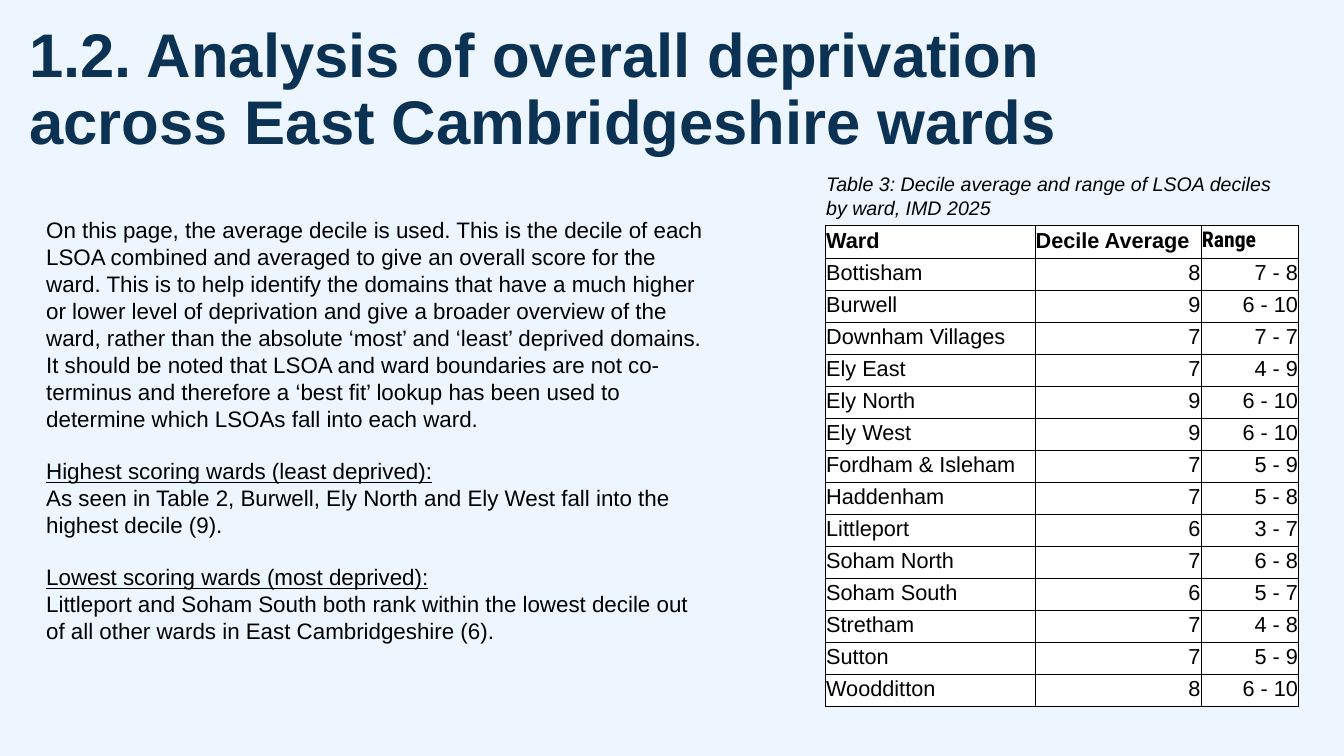
from lxml.etree import SubElement
from pptx import Presentation
from pptx.dml.color import RGBColor
from pptx.enum.text import MSO_ANCHOR, MSO_AUTO_SIZE, PP_ALIGN
from pptx.oxml.ns import qn
from pptx.util import Cm, Pt

COLORS = {"background": "EDF6FF", "title": "0B3153", "text": "000000", "cell": "FFFFFF"}

TITLE = "1.2. Analysis of overall deprivation across East Cambridgeshire wards"
INTRO = (
    "On this page, the average decile is used. This is the decile of each LSOA combined "
    "and averaged to give an overall score for the ward. This is to help identify the "
    "domains that have a much higher or lower level of deprivation and give a broader "
    "overview of the ward, rather than the absolute ‘most’ and ‘least’ deprived domains. "
    "It should be noted that LSOA and ward boundaries are not co-terminus and therefore "
    "a ‘best fit’ lookup has been used to determine which LSOAs fall into each ward."
)
FINDINGS = [
    ("Highest scoring wards (least deprived):",
     "As seen in Table 2, Burwell, Ely North and Ely West fall into the highest decile (9)."),
    ("Lowest scoring wards (most deprived):",
     "Littleport and Soham South both rank within the lowest decile out of all other "
     "wards in East Cambridgeshire (6)."),
]
CAPTION = "Table 3: Decile average and range of LSOA deciles by ward, IMD 2025"
HEADER = ("Ward", "Decile Average", "Range")
WARDS = [
    ("Bottisham", "8", "7 - 8"),
    ("Burwell", "9", "6 - 10"),
    ("Downham Villages", "7", "7 - 7"),
    ("Ely East", "7", "4 - 9"),
    ("Ely North", "9", "6 - 10"),
    ("Ely West", "9", "6 - 10"),
    ("Fordham & Isleham", "7", "5 - 9"),
    ("Haddenham", "7", "5 - 8"),
    ("Littleport", "6", "3 - 7"),
    ("Soham North", "7", "6 - 8"),
    ("Soham South", "6", "5 - 7"),
    ("Stretham", "7", "4 - 8"),
    ("Sutton", "7", "5 - 9"),
    ("Woodditton", "8", "6 - 10"),
]
COLUMN_WIDTHS = (5.28, 4.19, 2.46)
ROW_HEIGHT = 0.8


def style(para, size, color="text", name="Arial", bold=False):
    font = para.font
    font.name, font.size, font.bold = name, Pt(size), bold
    font.color.rgb = RGBColor.from_string(COLORS[color])


def move(shape, left, top, width, height):
    shape.left, shape.top, shape.width, shape.height = map(Cm, (left, top, width, height))


def add_title(page, box):
    title = page.shapes.title
    move(title, *box)
    frame = title.text_frame
    frame.text = TITLE
    frame.auto_size = MSO_AUTO_SIZE.NONE
    frame.vertical_anchor = MSO_ANCHOR.MIDDLE
    frame.margin_left = frame.margin_right = frame.margin_top = frame.margin_bottom = 0
    para = frame.paragraphs[0]
    para.alignment = PP_ALIGN.LEFT
    para.line_spacing = 0.9
    para.space_after = Pt(6)
    style(para, 44, "title", bold=True)


def add_commentary(page, box):
    body = page.placeholders[1]
    move(body, *box)
    frame = body.text_frame
    frame.auto_size = MSO_AUTO_SIZE.NONE
    lines = [(INTRO, False)]
    for heading, finding in FINDINGS:
        lines += [(heading, True), (finding, False)]
    for index, (text, is_heading) in enumerate(lines):
        para = frame.add_paragraph() if index else frame.paragraphs[0]
        para.text = text
        para.space_before = Pt(18.4 if is_heading else 0)
        properties = para._p.get_or_add_pPr()
        properties.set("marL", "0")
        properties.set("indent", "0")
        SubElement(properties, qn("a:buNone"))
        style(para, 16)
        para.font.underline = is_heading


def add_caption(page, box):
    frame = page.shapes.add_textbox(*map(Cm, box)).text_frame
    frame.word_wrap = True
    frame.text = CAPTION
    para = frame.paragraphs[0]
    style(para, 14)
    para.font.italic = True


def add_borders(cell):
    properties = cell._tc.get_or_add_tcPr()
    for side in ("lnL", "lnR", "lnT", "lnB"):
        line = SubElement(properties, qn(f"a:{side}"), w=str(Pt(0.5)))
        fill = SubElement(line, qn("a:solidFill"))
        SubElement(fill, qn("a:srgbClr"), val=COLORS["text"])


def add_ward_table(page, left, top):
    rows = [HEADER] + WARDS
    frame = page.shapes.add_table(
        len(rows), len(HEADER), Cm(left), Cm(top),
        Cm(sum(COLUMN_WIDTHS)), Cm(ROW_HEIGHT * len(rows)),
    )
    table = frame.table
    table.first_row = table.horz_banding = False
    for column, width in zip(table.columns, COLUMN_WIDTHS):
        column.width = Cm(width)
    for row_index, values in enumerate(rows):
        table.rows[row_index].height = Cm(ROW_HEIGHT)
        is_header = row_index == 0
        for column_index, value in enumerate(values):
            cell = table.cell(row_index, column_index)
            cell.text = value
            cell.vertical_anchor = MSO_ANCHOR.BOTTOM
            cell.margin_left = cell.margin_right = cell.margin_top = Cm(0.02)
            cell.margin_bottom = Cm(0.13)
            add_borders(cell)
            cell.fill.solid()
            cell.fill.fore_color.rgb = RGBColor.from_string(COLORS["cell"])
            para = cell.text_frame.paragraphs[0]
            if column_index and not is_header:
                para.alignment = PP_ALIGN.RIGHT
            name = "Roboto Condensed" if value == "Range" else "Arial"
            style(para, 15.5, name=name, bold=is_header)


def main():
    deck = Presentation()
    deck.slide_width, deck.slide_height = Cm(33.87), Cm(19.05)
    page = deck.slides.add_slide(deck.slide_layouts[1])
    page.background.fill.solid()
    page.background.fill.fore_color.rgb = RGBColor.from_string(COLORS["background"])
    add_title(page, (0.74, 0.61, 27.41, 3.38))
    add_commentary(page, (0.91, 5.33, 17.2, 12.57))
    add_caption(page, (20.57, 4.22, 12.37, 1.45))
    add_ward_table(page, 20.8, 5.69)
    deck.save("out.pptx")


if __name__ == "__main__":
    main()
